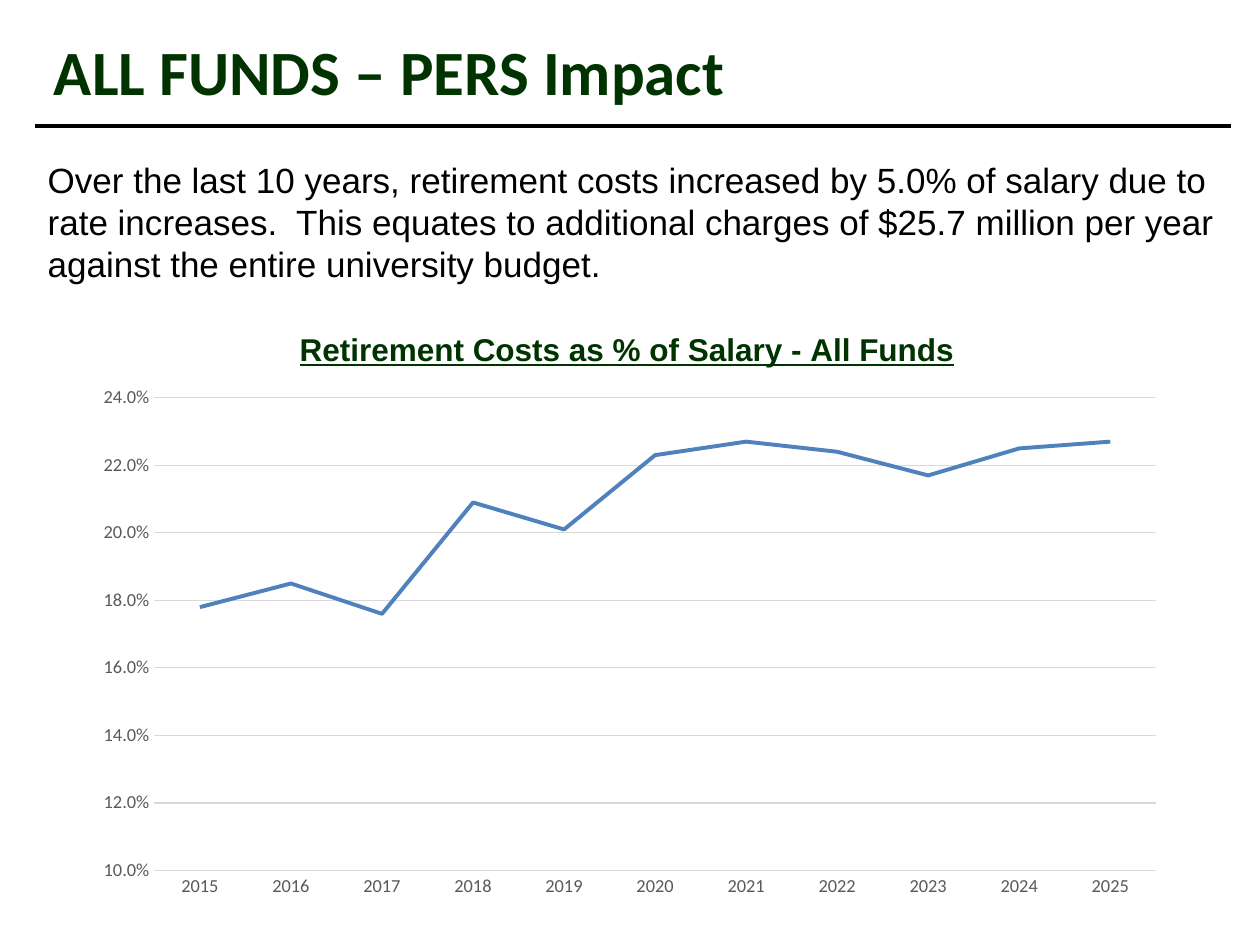
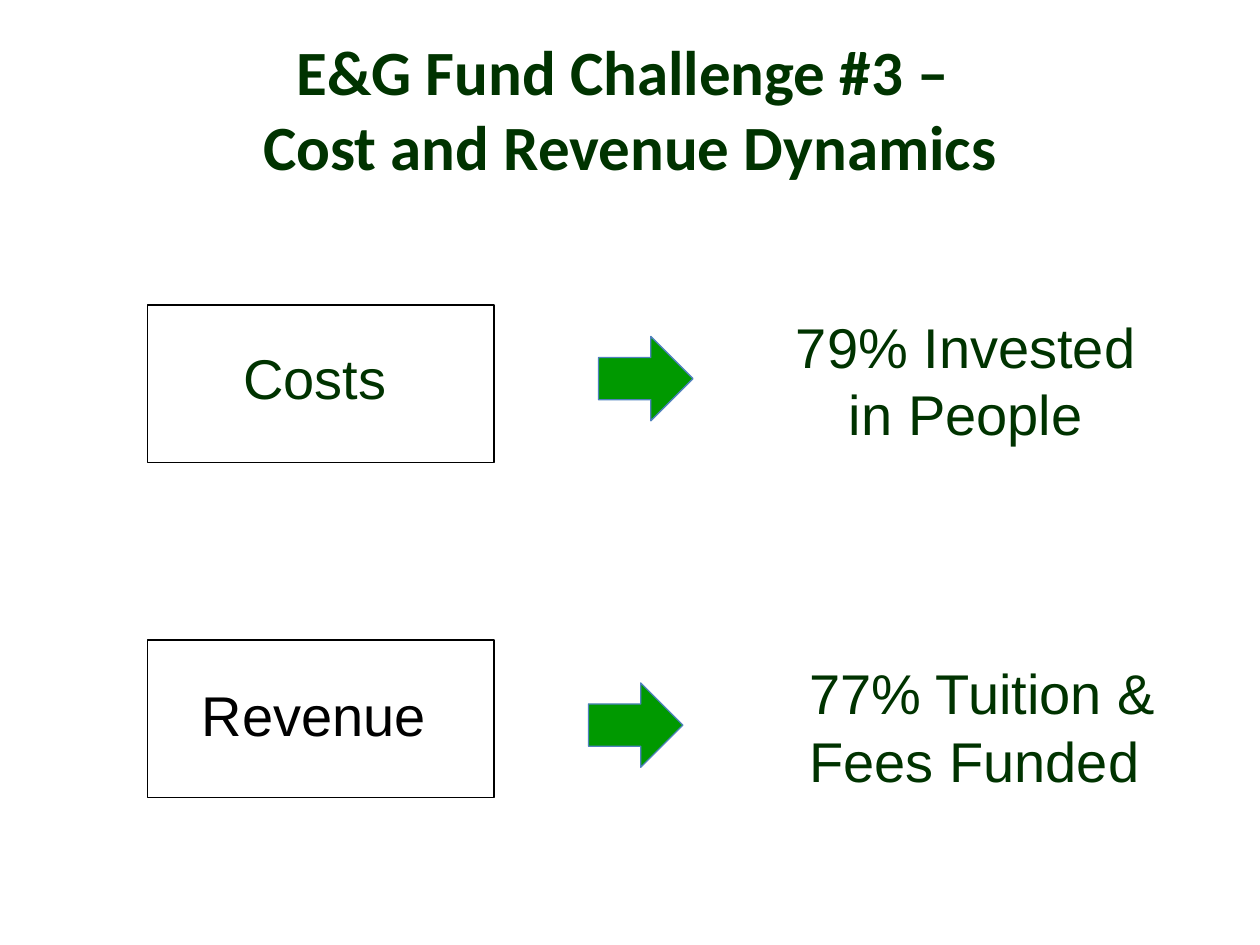
import pptx
import pptx.chart.data
import pptx.dml.color
import pptx.enum.chart
import pptx.enum.shapes
import pptx.enum.text
import pptx.oxml
import pptx.oxml.ns
import pptx.util
from lxml import etree

SCALE = 9144  # EMU per px, 100 px to the inch
HUES = {
    "dark": "003300", "black": "000000", "white": "FFFFFF", "green": "009900",
    "blue": "4F81BD", "grid": "D9D9D9", "label": "595959",
}
HEAD = {"name": "Calibri", "size": 36, "bold": True, "color": "dark"}
LABEL = {"name": "Arial", "size": 32, "color": "dark"}
NOTE = {"name": "Arial", "size": 20, "color": "black"}
AXIS = {"name": "Calibri", "size": 10.5, "color": "label"}
CAPTION = {"name": "Arial", "size": 18, "bold": True, "underline": True, "color": "dark"}

ALIGN = pptx.enum.text.PP_ALIGN
ANCHOR = pptx.enum.text.MSO_ANCHOR
SHAPE = pptx.enum.shapes.MSO_SHAPE
TICK = pptx.enum.chart.XL_TICK_MARK

RATES = {
    "2015": 0.178, "2016": 0.185, "2017": 0.176, "2018": 0.209,
    "2019": 0.201, "2020": 0.223, "2021": 0.227, "2022": 0.224,
    "2023": 0.217, "2024": 0.225, "2025": 0.227,
}


def px(*nums):
    return [pptx.util.Emu(num * SCALE) for num in nums]


def hue(key):
    return pptx.dml.color.RGBColor.from_string(HUES[key])


def put(item, style):
    for key, val in style.items():
        setattr(item, key, val)


def ink(font, style):
    """Apply a text style to a font."""
    for key, val in style.items():
        if key == "color":
            font.color.rgb = hue(val)
        else:
            setattr(font, key, pptx.util.Pt(val) if key == "size" else val)


def stroke(line, key, width):
    line.color.rgb = hue(key)
    line.width = pptx.util.Pt(width)


def text(slide, box, lines, style, align=ALIGN.LEFT, anchor=ANCHOR.TOP, pad=(10, 5)):
    """Add a text box; pad is its left and top inset."""
    frame = slide.shapes.add_textbox(*px(*box)).text_frame
    left, top = px(*pad)
    put(frame, {"word_wrap": True, "vertical_anchor": anchor,
                "margin_left": left, "margin_top": top})
    for num, line in enumerate(lines):
        para = frame.add_paragraph() if num else frame.paragraphs[0]
        para.alignment = align
        run = para.add_run()
        run.text = line
        ink(run.font, style)


def title(slide, box, lines, align=ALIGN.LEFT):
    text(slide, box, lines, HEAD, align, ANCHOR.MIDDLE)


def shape(slide, kind, box, edge, fill=None):
    item = slide.shapes.add_shape(kind, *px(*box))
    item.shadow.inherit = False
    if fill:
        item.fill.solid()
        item.fill.fore_color.rgb = hue(fill)
    else:
        item.fill.background()
    stroke(item.line, edge, 0.75)


def rule(slide, ends):
    line = slide.shapes.add_connector(
        pptx.enum.shapes.MSO_CONNECTOR.STRAIGHT, *px(*ends))
    stroke(line.line, "black", 2.25)
    etree.SubElement(line._element.spPr, pptx.oxml.ns.qn("a:effectLst"))


def place(node, spot, parts):
    """Give a chart element a manual layout as its child number spot."""
    name = pptx.oxml.ns.qn
    for old in node.findall(name("c:layout")):
        node.remove(old)
    layout = etree.Element(name("c:layout"))
    manual = etree.SubElement(layout, name("c:manualLayout"))
    for key, val in parts.items():
        etree.SubElement(manual, name("c:" + key)).set("val", str(val))
    node.insert(spot, layout)


def chart(slide, box, rates, caption):
    data = pptx.chart.data.CategoryChartData(number_format="0.0%")
    data.categories = list(rates)
    data.add_series("Series 1", list(rates.values()))
    kind = pptx.enum.chart.XL_CHART_TYPE.LINE
    graph = slide.shapes.add_chart(kind, *px(*box), data).chart
    graph.has_legend = False
    ink(graph.font, {"name": "Calibri", "size": 10, "color": "black"})

    graph.has_title = True
    run = graph.chart_title.text_frame.paragraphs[0].add_run()
    run.text = caption
    ink(run.font, CAPTION)
    edge = {"xMode": "edge", "yMode": "edge"}
    place(graph.chart_title._element, 1, {**edge, "x": 0.27, "y": 0.15})
    place(graph._chartSpace.chart.plotArea, 0, {
        "layoutTarget": "inner", **edge,
        "x": 0.173, "y": 0.199, "w": 0.696, "h": 0.611})

    years, costs = graph.category_axis, graph.value_axis
    for axis in (years, costs):
        put(axis, {"major_tick_mark": TICK.NONE, "minor_tick_mark": TICK.NONE})
        ink(axis.tick_labels.font, AXIS)
    put(costs, {"minimum_scale": 0.1, "maximum_scale": 0.25, "major_unit": 0.02,
                "has_major_gridlines": True})
    put(costs.tick_labels, {"number_format": "0.0%", "number_format_is_linked": False})
    costs.format.line.fill.background()
    for item in (years, costs.major_gridlines):
        stroke(item.format.line, "grid", 0.75)

    graph.plots[0].vary_by_categories = False
    curve = graph.plots[0].series[0]
    curve.smooth = False
    curve.marker.style = pptx.enum.chart.XL_MARKER_STYLE.NONE
    stroke(curve.format.line, "blue", 2.25)


def blank(deck):
    slide = deck.slides.add_slide(deck.slide_layouts[6])
    slide.background.fill.solid()
    slide.background.fill.fore_color.rgb = hue("white")
    return slide


def impact(deck):
    slide = blank(deck)
    title(slide, (33, -5, 942, 122), ["ALL FUNDS – PERS Impact"])
    rule(slide, (28, 100, 977, 100))
    chart(slide, (-75, 158, 1142, 658), RATES, "Retirement Costs as % of Salary - All Funds")
    text(slide, (28, 121, 955, 111), [
        "Over the last 10 years, retirement costs increased by 5.0% of salary due to "
        "rate increases.  This equates to additional charges of $25.7 million per year "
        "against the entire university budget."], NOTE)


def drivers(deck):
    slide = blank(deck)
    title(slide, (0, 37, 1000, 97),
          ["E&G Fund Challenge #3 – ", "Cost and Revenue Dynamics"], ALIGN.CENTER)
    inset = (110, 48)
    rows = [
        (242, "Costs", (83, 225, 358, 142), "dark", (475, 267),
         "79% Invested in People", (508, 200, 417, 183)),
        (508, "Revenue", (50, 492, 358, 150), "black", (467, 542),
         "77% Tuition & Fees Funded ", (517, 475, 425, 192)),
    ]
    for top, name, area, color, tip, share, side in rows:
        shape(slide, SHAPE.RECTANGLE, (117, top, 275, 125), "black")
        shape(slide, SHAPE.RIGHT_ARROW, (*tip, 75, 67), "blue", "green")
        text(slide, area, [name], {**LABEL, "color": color}, pad=inset)
        text(slide, side, [share], LABEL, ALIGN.CENTER, pad=inset)


def main():
    deck = pptx.Presentation()
    deck.slide_width, deck.slide_height = px(1000, 750)
    impact(deck)
    drivers(deck)
    deck.save("out.pptx")


if __name__ == "__main__":
    main()
